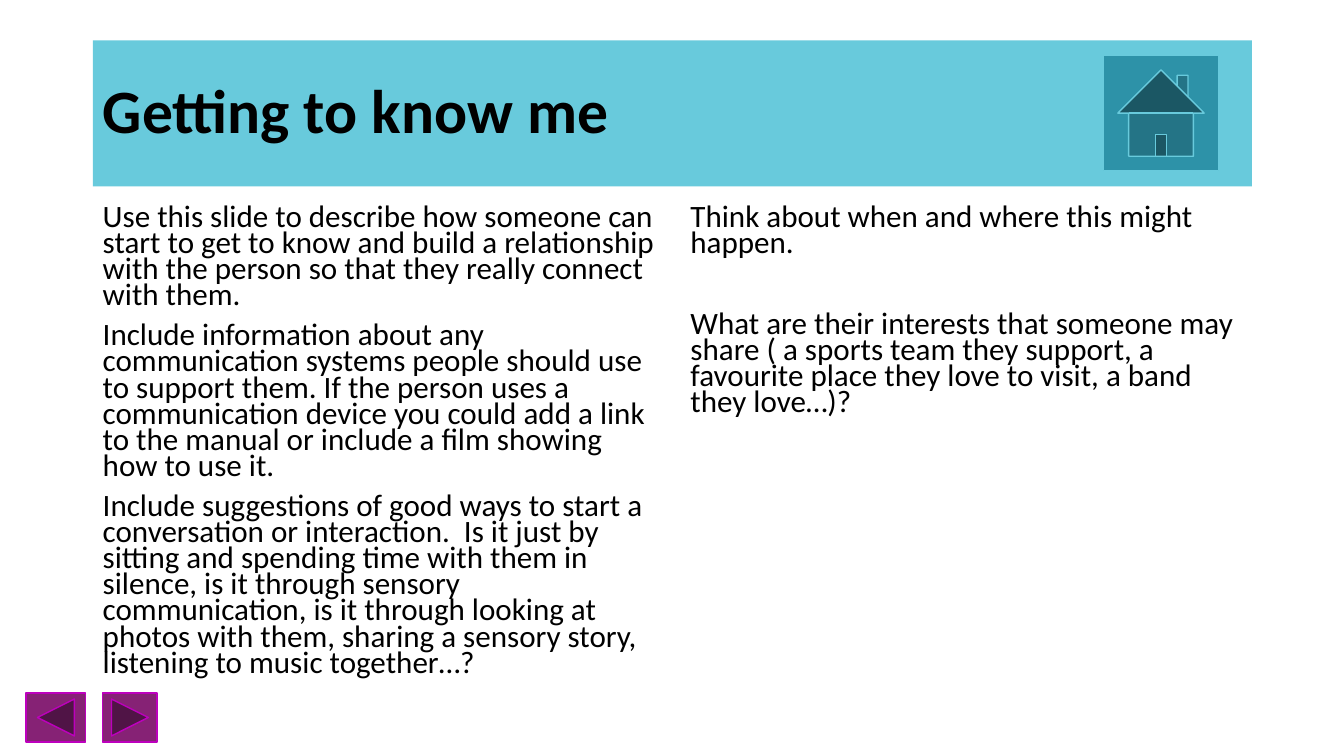
from collections import namedtuple

from pptx import Presentation
from pptx.dml.color import RGBColor
from pptx.enum.shapes import MSO_SHAPE as Preset
from pptx.enum.text import MSO_ANCHOR as Anchor, MSO_AUTO_SIZE as AutoSize, PP_ALIGN as Align
from pptx.util import Cm, Pt

Box = namedtuple("Box", "left top width height")

COLOURS = {
    "text": "000000",
    "banner": "68CADC",
    "home": "2D92A8",
    "arrow": "862275",
    "arrow_line": "BD00BD",
}
TITLE_FONT = {"name": "Calibri", "size": Pt(44), "bold": True}
BODY_FONT = {"name": "Calibri", "size": Pt(22.2), "bold": False}
BODY_SPACING = 0.7
COLUMN_GAP = 0.41

# Each column lists its paragraphs with the space before them in points.
COLUMNS = [
    [
        ("Use this slide to describe how someone can start to get to know and build a "
         "relationship with the person so that they really connect with them.", 0),
        ("Include information about any communication systems people should use to "
         "support them. If the person uses a communication device you could add a link "
         "to the manual or include a film showing how to use it.", 10),
        ("Include suggestions of good ways to start a conversation or interaction.  Is it "
         "just by sitting and spending time with them in silence, is it through sensory "
         "communication, is it through looking at photos with them, sharing a sensory "
         "story, listening to music together…?", 10),
    ],
    [
        ("Think about when and where this might happen.", 0),
        ("What are their interests that someone may share ( a sports team they support, a "
         "favourite place they love to visit, a band they love…)?", 39),
    ],
]


def colour(name):
    return RGBColor.from_string(COLOURS[name])


def in_cm(box):
    return [Cm(length) for length in box]


def write(para, text, font_values, spacing, before=0):
    """Fill a paragraph with one left-aligned run in the given format."""
    para.alignment = Align.LEFT
    para.line_spacing = spacing
    para.space_before = Pt(before)
    para.space_after = Pt(0)
    span = para.add_run()
    span.text = text
    for name, value in font_values.items():
        setattr(span.font, name, value)
    span.font.color.rgb = colour("text")


def add_button(page, preset, box, fill, line):
    button = page.shapes.add_shape(preset, *in_cm(box))
    button.shadow.inherit = False
    button.fill.solid()
    button.fill.fore_color.rgb = colour(fill)
    button.line.color.rgb = colour(line)
    button.line.width = Pt(1)


def add_banner(page, box):
    """Place the title on its coloured band, with the home button at the right."""
    title = page.shapes.title
    title.left, title.top, title.width, title.height = in_cm(box)
    title.fill.solid()
    title.fill.fore_color.rgb = colour("banner")
    frame = title.text_frame
    frame.auto_size = AutoSize.NONE
    frame.word_wrap = True
    frame.vertical_anchor = Anchor.MIDDLE
    write(frame.paragraphs[0], "Getting to know me", TITLE_FONT, 0.9)

    side = 2.9
    home = Box(box.left + box.width - side - 0.84, box.top + 0.38, side, side)
    add_button(page, Preset.ACTION_BUTTON_HOME, home, "home", "banner")


def add_columns(page, box):
    """Split the box into equal text columns."""
    width = (box.width - COLUMN_GAP * (len(COLUMNS) - 1)) / len(COLUMNS)
    for index, column in enumerate(COLUMNS):
        left = box.left + index * (width + COLUMN_GAP)
        area = Box(left, box.top, width, box.height)
        frame = page.shapes.add_textbox(*in_cm(area)).text_frame
        frame.word_wrap = True
        for number, (text, before) in enumerate(column):
            para = frame.add_paragraph() if number else frame.paragraphs[0]
            write(para, text, BODY_FONT, BODY_SPACING, before)


def add_navigation(page, box):
    """Place the back button at the left of the box and the next button at its right."""
    back_width, next_width = 1.5, 1.37
    back = box._replace(width=back_width)
    forward = box._replace(left=box.left + box.width - next_width, width=next_width)
    for preset, area in [
        (Preset.ACTION_BUTTON_FORWARD_OR_NEXT, forward),
        (Preset.ACTION_BUTTON_BACK_OR_PREVIOUS, back),
    ]:
        add_button(page, preset, area, "arrow", "arrow_line")


def main():
    deck = Presentation()
    deck.slide_width, deck.slide_height = Cm(33.87), Cm(19.05)
    page = deck.slides.add_slide(deck.slide_layouts.get_by_name("Title Only"))
    add_banner(page, Box(2.34, 1.02, 29.21, 3.68))
    add_columns(page, Box(2.34, 5.08, 29.21, 12.09))
    add_navigation(page, Box(0.66, 17.46, 3.3, 1.24))
    deck.save("out.pptx")


if __name__ == "__main__":
    main()
